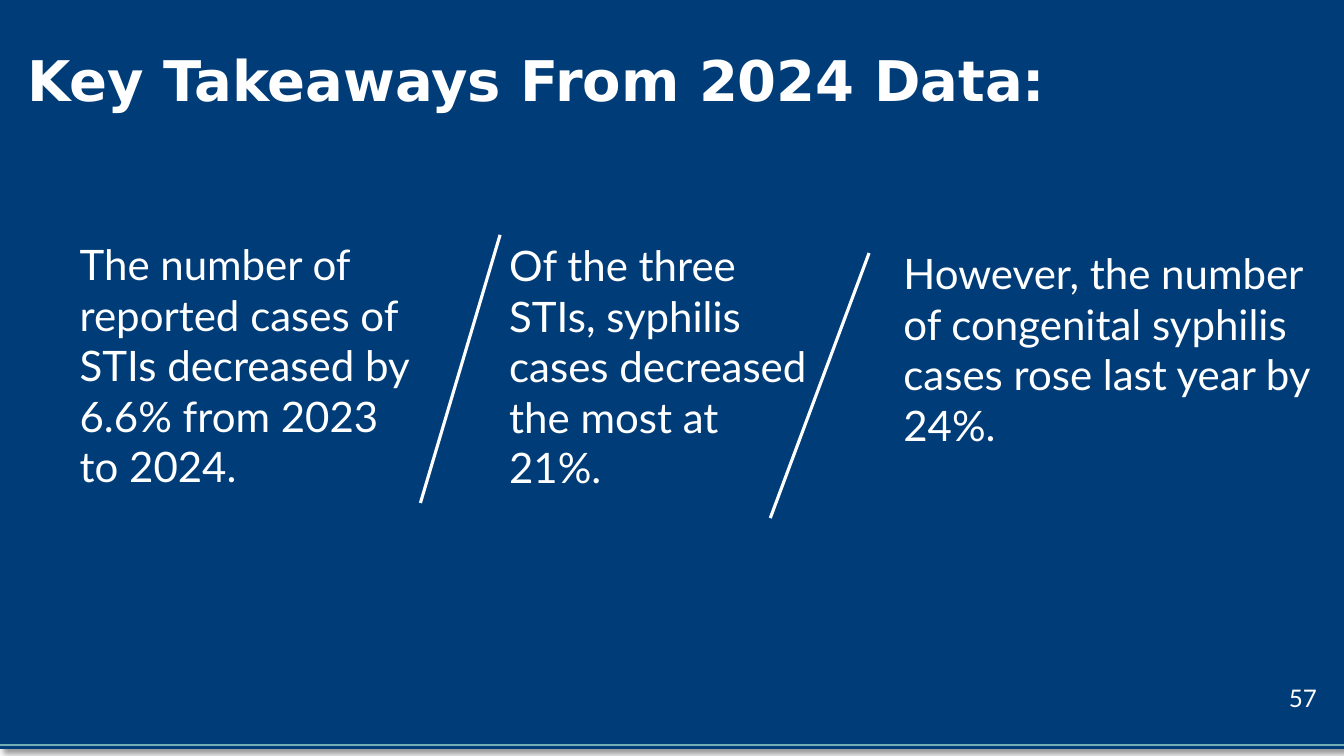
from lxml.etree import SubElement
from pptx import Presentation
from pptx.dml.color import RGBColor
from pptx.enum.shapes import MSO_CONNECTOR as Connector, MSO_SHAPE as Shape
from pptx.enum.text import MSO_ANCHOR as Anchor, MSO_AUTO_SIZE as AutoSize, PP_ALIGN as Align
from pptx.oxml.ns import qn
from pptx.util import Inches, Pt

NAVY, TEAL, WHITE = "003D78", "72AEB6", "FFFFFF"
WIDTH, HEIGHT = 13.33, 7.5


def color(value):
    return RGBColor.from_string(value)


def write(frame, text, size=30, font="Lato", bold=False, align=Align.LEFT,
          anchor=Anchor.TOP, insets=(0.07, 0.04)):
    frame.word_wrap = True
    frame.auto_size = AutoSize.NONE
    frame.vertical_anchor = anchor
    frame.margin_left = frame.margin_right = Inches(insets[0])
    frame.margin_top = frame.margin_bottom = Inches(insets[1])
    paragraph = frame.paragraphs[0]
    paragraph.alignment = align
    run = paragraph.add_run()
    run.text = text
    run.font.size = Pt(size)
    run.font.name = font
    run.font.bold = bold
    run.font.color.rgb = color(WHITE)


class TakeawaySlide:
    """Draws the elements of a takeaway slide in one shared style."""

    def __init__(self, slide):
        self.slide = slide
        self.shapes = slide.shapes

    def panel(self, top, height, shadow=False):
        panel = self.shapes.add_shape(Shape.RECTANGLE, 0, Inches(top), Inches(WIDTH), Inches(height))
        panel.fill.solid()
        panel.fill.fore_color.rgb = color(NAVY)
        panel.line.fill.background()
        panel.shadow.inherit = False
        if shadow:
            effects = panel._element.spPr.find(qn("a:effectLst"))
            outer = SubElement(effects, qn("a:outerShdw"), blurRad=str(Pt(4)),
                               dist=str(Pt(3)), dir="2700000", rotWithShape="0")
            black = SubElement(outer, qn("a:srgbClr"), val="000000")
            SubElement(black, qn("a:alpha"), val="40000")

    def line(self, start, end, stroke=WHITE, width=2.25):
        line = self.shapes.add_connector(Connector.STRAIGHT, *map(Inches, start + end))
        line.line.color.rgb = color(stroke)
        line.line.width = Pt(width)
        SubElement(line._element.spPr, qn("a:effectLst"))

    def title(self, text, left, top, width, height):
        title = self.shapes.title
        title.left, title.top, title.width, title.height = map(Inches, (left, top, width, height))
        self.shapes._spTree.append(title._element)
        write(title.text_frame, text, size=40, font="DejaVu Sans", bold=True,
              anchor=Anchor.MIDDLE, insets=(0.1, 0.05))

    def text(self, text, left, top, width, height, **style):
        box = self.shapes.add_textbox(*map(Inches, (left, top, width, height)))
        write(box.text_frame, text, **style)


def main():
    deck = Presentation()
    deck.slide_width, deck.slide_height = Inches(WIDTH), Inches(HEIGHT)
    page = TakeawaySlide(deck.slides.add_slide(deck.slide_layouts[5]))

    page.panel(6.96, 0.47, shadow=True)
    page.line((0, 7.39), (WIDTH, 7.39), stroke=TEAL, width=1.5)
    page.panel(0, 7.1)
    page.title("Key Takeaways From 2024 Data:", 0.17, 0.4, 11, 0.77)

    takeaways = [
        ("The number of reported cases of STIs decreased by 6.6% from 2023 to 2024.",
         0.72, 2.33, 3.49, 1.98),
        ("Of the three STIs, syphilis cases decreased the most at 21%.",
         4.98, 2.34, 3.12, 1.98),
        ("However, the number of congenital syphilis cases rose last year by 24%.",
         8.89, 2.42, 4.28, 2.48),
    ]
    for takeaway in takeaways:
        page.text(*takeaway)

    page.line((4.17, 4.99), (4.96, 2.33))
    page.line((7.64, 5.14), (8.62, 2.51))
    page.text("57", 10.83, 6.77, 2.33, 0.3, size=17.3, align=Align.RIGHT,
              anchor=Anchor.MIDDLE, insets=(0.1, 0.05))
    deck.save("out.pptx")


if __name__ == "__main__":
    main()
